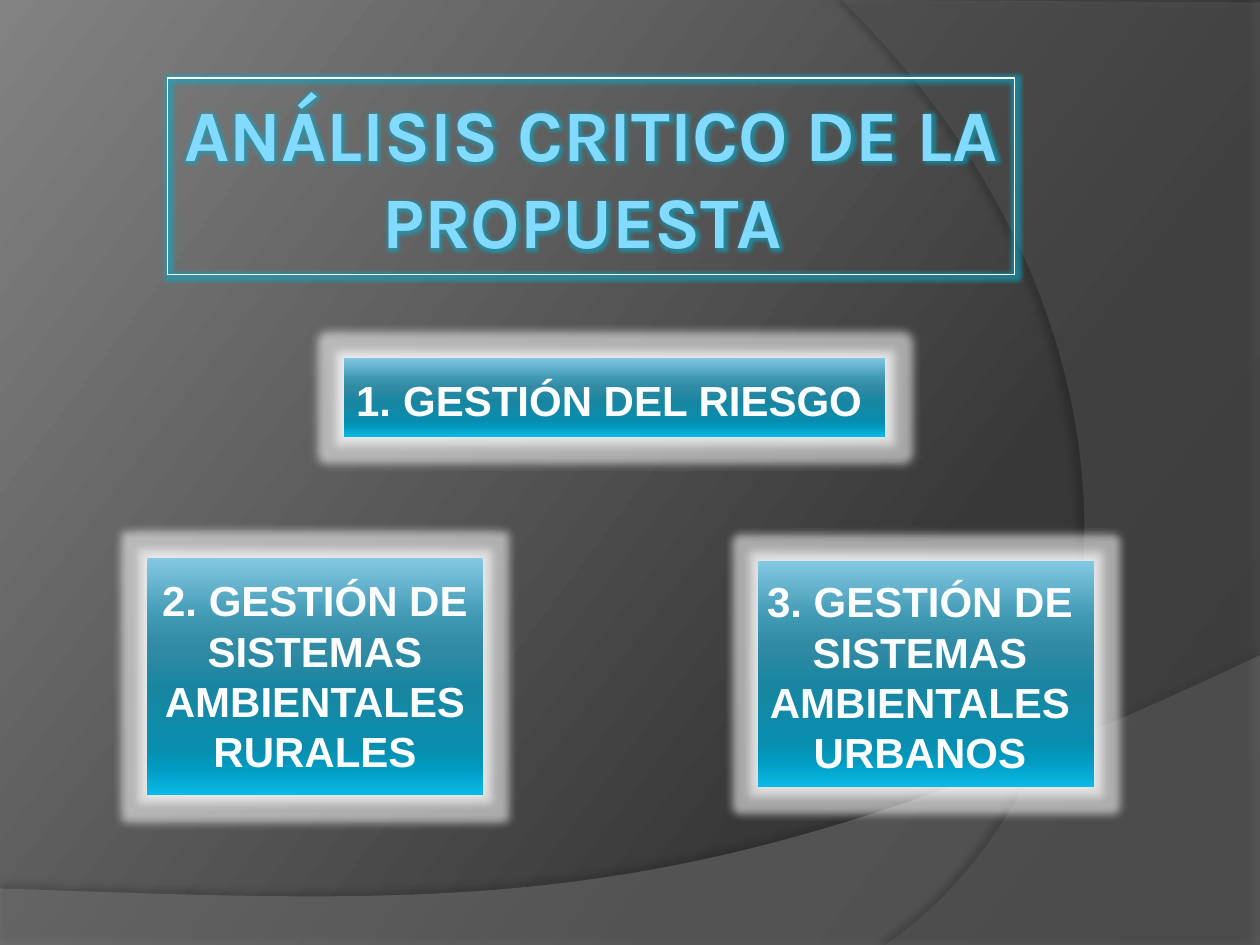
"""Build the slide that introduces the three parts of the critical analysis."""
from dataclasses import dataclass

from pptx import Presentation
from pptx.dml.color import RGBColor as Rgb
from pptx.enum.shapes import MSO_SHAPE as Shape
from pptx.enum.text import MSO_ANCHOR as Anchor, MSO_AUTO_SIZE as AutoSize, PP_ALIGN as Align
from pptx.oxml import parse_xml
from pptx.oxml.ns import nsdecls, qn
from pptx.util import Cm, Pt


@dataclass(frozen=True)
class Theme:
    heading: str = "82DBFF"
    heading_glow: str = "00B0D0"
    frame: str = "FFFFFF"
    label: str = "FCFDFE"
    halo: str = "FFFFFF"
    shade: str = "000000"
    lower_wave: str = "7F7F7F"
    right_wave: str = "5E5E5E"
    backdrop: tuple = ((0, "2F2F2F"), (30, "383838"), (100, "828282"))
    panel: tuple = ((0, "84C8E3"), (25, "4099B3"), (38, "318AA4"), (55, "1886A1"),
                    (80, "098DAE"), (88, "019AC0"), (100, "0ABAE6"))
    heading_font: str = "Karla"
    label_font: str = "Arial"
    heading_size: float = 41.4
    label_size: float = 24
    label_leading: float = 28.8


theme = Theme()


def blend(fill, owner, stops, angle):
    fill.gradient()
    fill.gradient_angle = 360 - angle
    stop_list = owner.find(".//" + qn("a:gsLst"))
    for old_stop in list(stop_list):
        stop_list.remove(old_stop)
    for position, color in stops:
        stop_list.append(parse_xml(
            f'<a:gs {nsdecls("a")} pos="{position * 1000}"><a:srgbClr val="{color}"/></a:gs>'))


def write(frame, text, *, font, size, color, align=Align.CENTER, leading=None):
    frame.word_wrap = True
    paragraph = frame.paragraphs[0]
    paragraph.alignment = align
    if leading:
        paragraph.line_spacing = Pt(leading)
    run = paragraph.add_run()
    run.text = text
    run.font.name = font
    run.font.size = Pt(size)
    run.font.bold = True
    run.font.color.rgb = Rgb.from_string(color)
    return run


deck = Presentation()
deck.slide_width, deck.slide_height = Cm(25.4), Cm(19.05)
slide = deck.slides.add_slide(deck.slide_layouts[0])
heading, subtitle = slide.placeholders
subtitle.element.getparent().remove(subtitle.element)
blend(slide.background.fill, slide.element, theme.backdrop, 217)

glow = '<a:glow {ns} rad="{rad}"><a:srgbClr val="{color}"><a:alpha val="{alpha}000"/></a:srgbClr></a:glow>'
shadow = ('<a:outerShdw {ns} blurRad="{blur}" dist="{dist}" dir="{angle}" algn="ctr" rotWithShape="0">'
          '<a:srgbClr val="{color}"><a:alpha val="{alpha}000"/></a:srgbClr></a:outerShdw>')
ns = nsdecls("a")

waves = [
    ([(0, 17.91), (0, 19.05), (25.4, 19.05), (25.4, 13.21)],
     [(14.2, 18.52), (9.93, 18.26), (0, 17.91)], theme.lower_wave, 45, 35, Pt(3.5), 270),
    ([(25.4, 0.05), (25.4, 19.05), (17.86, 19.05)],
     [(22.63, 15.72), (24.05, 6.99), (16.97, 0)], theme.right_wave, 40, 45, Pt(4), 180),
]
steps = 48
for corners, bend, color, opacity, shade_opacity, distance, angle in waves:
    controls = [corners[-1], *bend]
    curve = []
    for step in range(1, steps + 1):
        t = step / steps
        weights = ((1 - t) ** 3, 3 * t * (1 - t) ** 2, 3 * t ** 2 * (1 - t), t ** 3)
        curve.append(tuple(sum(w * point[axis] for w, point in zip(weights, controls))
                           for axis in (0, 1)))
    outline = [(Cm(x), Cm(y)) for x, y in corners + curve]
    builder = slide.shapes.build_freeform(*outline[0])
    builder.add_line_segments(outline[1:], close=True)
    wave = builder.convert_to_shape()
    wave.fill.solid()
    wave.fill.fore_color.rgb = Rgb.from_string(color)
    wave.line.fill.background()
    wave.shadow.inherit = False
    properties = wave.element.spPr
    properties.find(".//" + qn("a:srgbClr")).append(
        parse_xml(f'<a:alpha {ns} val="{opacity}000"/>'))
    properties.find(qn("a:effectLst")).append(parse_xml(shadow.format(
        ns=ns, blur=Pt(4), dist=distance, angle=angle * 60000, color=theme.shade,
        alpha=shade_opacity)))

slide.shapes._spTree.append(heading.element)
heading.left, heading.top, heading.width, heading.height = Cm(3.38), Cm(1.57), Cm(17.07), Cm(3.96)
heading.line.color.rgb = Rgb.from_string(theme.frame)
heading.line.width = Pt(0.75)
heading.shadow.inherit = False
heading_glow = glow.format(ns=ns, rad=Pt(5), color=theme.heading_glow, alpha=55)
heading.element.spPr.find(qn("a:effectLst")).append(parse_xml(heading_glow))
title_frame = heading.text_frame
title_frame.auto_size = AutoSize.NONE
title_frame.vertical_anchor = Anchor.MIDDLE
title_frame.margin_left = title_frame.margin_right = Cm(0.13)
title_frame.margin_top = title_frame.margin_bottom = Cm(0.13)
title_run = write(title_frame, "ANÁLISIS CRITICO DE LA PROPUESTA ", font=theme.heading_font,
                  size=theme.heading_size, color=theme.heading)
title_effects = parse_xml(f"<a:effectLst {ns}>{heading_glow}</a:effectLst>")
title_run.font._element.find(qn("a:solidFill")).addnext(title_effects)

topics = [
    ("GESTIÓN DEL RIESGO", (6.93, 7.21, 10.92, 1.6), (6.93, 7.42, 11.13, 2.31), True),
    ("2. GESTIÓN DE SISTEMAS AMBIENTALES RURALES",
     (2.97, 11.25, 6.76, 4.78), (2.97, 11.46, 6.76, 6.4), False),
    ("3. GESTIÓN DE SISTEMAS AMBIENTALES URBANOS",
     (15.29, 11.3, 6.76, 4.57), (13.49, 11.48, 10.11, 5.38), False),
]
for topic, panel_area, label_area, numbered in topics:
    panel = slide.shapes.add_shape(Shape.RECTANGLE, *map(Cm, panel_area))
    blend(panel.fill, panel.element.spPr, theme.panel, 90)
    panel.line.fill.background()
    panel.shadow.inherit = False
    effects = panel.element.spPr.find(qn("a:effectLst"))
    effects.append(parse_xml(glow.format(ns=ns, rad=Pt(10), color=theme.halo, alpha=55)))
    effects.append(parse_xml(shadow.format(
        ns=ns, blur=Pt(5), dist=0, angle=0, color=theme.halo, alpha=60)))

    label = slide.shapes.add_textbox(*map(Cm, label_area)).text_frame
    write(label, topic, font=theme.label_font, size=theme.label_size, color=theme.label,
          align=Align.LEFT if numbered else Align.CENTER, leading=theme.label_leading)
    if numbered:
        numbering = label.paragraphs[0]._p.get_or_add_pPr()
        numbering.set("marL", str(Cm(0.95)))
        numbering.set("indent", str(-Cm(0.95)))
        numbering.append(parse_xml(f'<a:buFont {ns} typeface="+mj-lt"/>'))
        numbering.append(parse_xml(f'<a:buAutoNum {ns} type="arabicPeriod"/>'))

deck.save("out.pptx")
